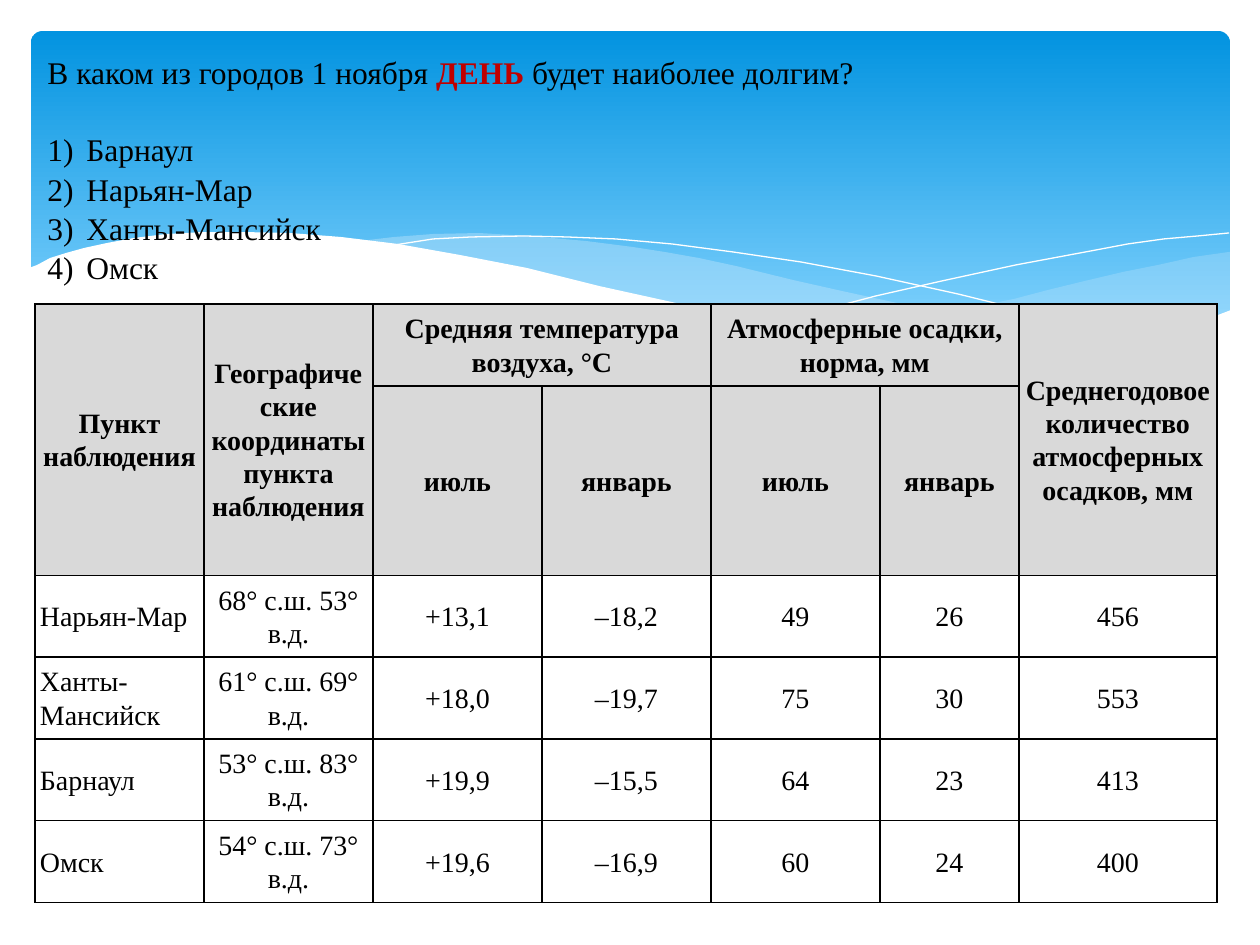
"""Build a quiz slide about day length with a climate table for four cities."""
from lxml import etree
from pptx import Presentation
from pptx.dml.color import RGBColor
from pptx.enum.shapes import MSO_SHAPE
from pptx.enum.text import MSO_ANCHOR, PP_ALIGN
from pptx.oxml.ns import qn
from pptx.util import Emu, Pt

ROUNDED = MSO_SHAPE.ROUNDED_RECTANGLE
MIDDLE = MSO_ANCHOR.MIDDLE
LEFT, CENTER = PP_ALIGN.LEFT, PP_ALIGN.CENTER

SCALE = 914400 / 126
FONT = "Times New Roman"
COLORS = {
    "sky_top": "0293E0",
    "sky_bottom": "83D3FE",
    "wave": "C6E7FC",
    "white": "FFFFFF",
    "text": "000000",
    "accent": "C00000",
    "header": "D9D9D9",
}

RIGHT_WAVE = [
    (1229, 252), (1194, 257), (1158, 265), (1123, 272), (1085, 281), (1048, 290),
    (1014, 299), (949, 312), (890, 324), (833, 334), (871, 339), (906, 343),
    (939, 346), (969, 349), (1012, 350), (1052, 349), (1087, 347), (1120, 343),
    (1150, 337), (1178, 330), (1204, 321), (1230, 311), (1230, 252),
]
MIDDLE_WAVE = [
    (1125, 344), (1091, 339), (1017, 328), (934, 311), (842, 291), (793, 280),
    (736, 266), (699, 258), (665, 252), (633, 247), (586, 241), (529, 236),
    (479, 233), (433, 234), (394, 237), (360, 241), (407, 247), (456, 256),
    (509, 266), (566, 280), (619, 292), (668, 302), (713, 312), (757, 321),
    (799, 329), (838, 335), (876, 340), (927, 347), (974, 349), (1031, 350),
    (1080, 349),
]
FALLING_LINE = [
    (389, 246), (401, 244), (433, 239), (471, 237), (524, 236), (567, 237),
    (616, 239), (672, 244), (733, 252), (801, 262), (876, 276), (958, 294),
    (1047, 316), (1143, 343),
]
RISING_LINE = [
    (772, 324), (823, 310), (876, 296), (942, 281), (1016, 265), (1091, 251),
    (1128, 244), (1164, 239), (1198, 236), (1229, 233),
]
WHITE_WAVE = [
    (1231, 310), (1197, 323), (1159, 334), (1118, 341), (1071, 347), (1019, 349),
    (959, 347), (892, 340), (816, 330), (730, 315), (667, 301), (599, 286),
    (527, 268), (460, 255), (398, 244), (341, 237), (290, 233), (243, 232),
    (203, 232), (166, 234), (134, 238), (107, 243), (84, 248), (66, 253),
    (50, 258), (37, 265), (29, 268), (29, 415), (1231, 415),
]

QUESTION = [("В каком из городов 1 ноября ", False), ("ДЕНЬ", True), (" будет наиболее долгим?", False)]
ANSWERS = ["Барнаул", "Нарьян-Мар", "Ханты-Мансийск", "Омск"]

COLUMN_WIDTHS = [169] * 5 + [139, 198]
ROW_HEIGHTS = [81, 189] + [81] * 4
HEADER_ROWS = 2
CLIMATE = [
    ["Пункт наблюдения", "Географические координаты пункта наблюдения",
     "Средняя температура воздуха, °С", "", "Атмосферные осадки, норма, мм", "",
     "Среднегодовое количество атмосферных осадков, мм"],
    ["", "", "июль", "январь", "июль", "январь", ""],
    ["Нарьян-Мар", "68° с.ш. 53° в.д.", "+13,1", "–18,2", "49", "26", "456"],
    ["Ханты-Мансийск", "61° с.ш. 69° в.д.", "+18,0", "–19,7", "75", "30", "553"],
    ["Барнаул", "53° с.ш. 83° в.д.", "+19,9", "–15,5", "64", "23", "413"],
    ["Омск", "54° с.ш. 73° в.д.", "+19,6", "–16,9", "60", "24", "400"],
]
MERGES = [(0, 0, 1, 0), (0, 1, 1, 1), (0, 2, 0, 3), (0, 4, 0, 5), (0, 6, 1, 6)]


def px(length):
    return Emu(round(length * SCALE))


def rgb(name):
    return RGBColor.from_string(COLORS[name])


class SlideBuilder:
    def __init__(self, slide):
        self.slide = slide

    def style(self, paragraph, size, bold=False):
        font = paragraph.font
        font.name, font.size, font.bold = FONT, Pt(size), bold
        font.color.rgb = rgb("text")

    def sky(self, left, top, width, height):
        panel = self.slide.shapes.add_shape(ROUNDED, px(left), px(top), px(width), px(height))
        panel.adjustments[0] = 0.034
        panel.shadow.inherit = False
        panel.line.fill.background()
        panel.fill.gradient()
        panel.fill.gradient_angle = 270
        for stop, name, position in zip(panel.fill.gradient_stops, ("sky_top", "sky_bottom"), (0, 0.9)):
            stop.color.rgb = rgb(name)
            stop.position = position

    def outline(self, points, closed):
        builder = self.slide.shapes.build_freeform(*points[0], scale=SCALE)
        builder.add_line_segments(points[1:], close=closed)
        shape = builder.convert_to_shape()
        shape.shadow.inherit = False
        return shape

    def wave(self, points, color, opacity=100):
        shape = self.outline(points, True)
        shape.line.fill.background()
        shape.fill.solid()
        shape.fill.fore_color.rgb = rgb(color)
        if opacity < 100:
            tint = shape.fill._xPr.find(qn("a:solidFill"))[0]
            etree.SubElement(tint, qn("a:alpha"), val=str(opacity * 1000))

    def curve(self, points):
        shape = self.outline(points, False)
        shape.fill.background()
        shape.line.color.rgb = rgb("white")
        shape.line.width = Pt(0)

    def quiz(self, left, top, width, height, question, answers):
        frame = self.slide.shapes.add_textbox(px(left), px(top), px(width), px(height)).text_frame
        frame.word_wrap = True
        prompt = frame.paragraphs[0]
        for text, stressed in question:
            run = prompt.add_run()
            run.text = text
            if stressed:
                run.font.bold = True
                run.font.color.rgb = rgb("accent")
        for number, answer in enumerate(answers, 1):
            option = frame.add_paragraph()
            option.text = f"{number})\t{answer}"
            option.space_before = Pt(22 if number == 1 else 0)
            properties = option._p.get_or_add_pPr()
            properties.set("marL", str(px(39)))
            properties.set("indent", str(-px(39)))
        for paragraph in frame.paragraphs:
            paragraph.line_spacing = 1.04
            self.style(paragraph, 18)

    def border(self, cell):
        properties = cell._tc.get_or_add_tcPr()
        for side in ("a:lnL", "a:lnR", "a:lnT", "a:lnB"):
            edge = etree.SubElement(properties, qn(side), w=str(Pt(1)))
            fill = etree.SubElement(edge, qn("a:solidFill"))
            etree.SubElement(fill, qn("a:srgbClr"), val=COLORS["text"])

    def cell(self, cell, text, header, align):
        self.border(cell)
        cell.vertical_anchor = MIDDLE
        cell.margin_left = cell.margin_right = cell.margin_top = cell.margin_bottom = px(5)
        if header:
            cell.fill.solid()
            cell.fill.fore_color.rgb = rgb("header")
        else:
            cell.fill.background()
        paragraph = cell.text_frame.paragraphs[0]
        if text:
            paragraph.text = text
        paragraph.alignment = align
        paragraph.line_spacing = 1.07
        if header:
            paragraph.space_after = Pt(8)
        else:
            paragraph.space_before = Pt(3.8)
        self.style(paragraph, 16, header)

    def table(self, left, top, widths, heights, rows, merges):
        table = self.slide.shapes.add_table(
            len(rows), len(widths), px(left), px(top), px(sum(widths)), px(sum(heights))).table
        for column, width in zip(table.columns, widths):
            column.width = px(width)
        for row, height in zip(table.rows, heights):
            row.height = px(height)
        for r, texts in enumerate(rows):
            header = r < HEADER_ROWS
            for c, text in enumerate(texts):
                self.cell(table.cell(r, c), text, header, CENTER if header or c else LEFT)
        for top_row, first, bottom_row, last in merges:
            table.cell(top_row, first).merge(table.cell(bottom_row, last))


def main():
    deck = Presentation()
    deck.slide_width, deck.slide_height = px(1260), px(945)
    builder = SlideBuilder(deck.slides.add_slide(deck.slide_layouts[6]))
    builder.sky(31, 31, 1199, 340)
    builder.wave(RIGHT_WAVE, "wave", 29)
    builder.wave(MIDDLE_WAVE, "wave", 40)
    builder.curve(FALLING_LINE)
    builder.curve(RISING_LINE)
    builder.wave(WHITE_WAVE, "white")
    builder.quiz(35, 45, 1181, 242, QUESTION, ANSWERS)
    builder.table(35, 304, COLUMN_WIDTHS, ROW_HEIGHTS, CLIMATE, MERGES)
    deck.save("out.pptx")


if __name__ == "__main__":
    main()
